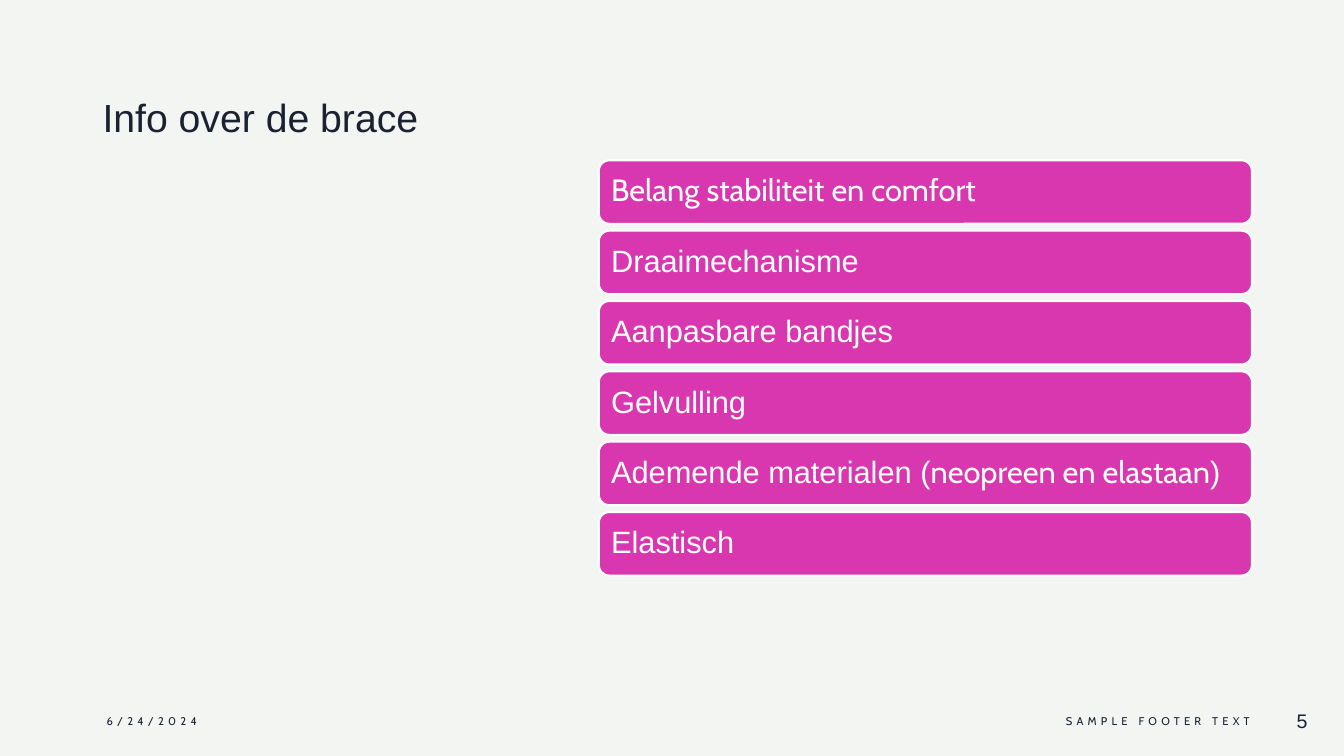
import pptx
import pptx.dml.color
import pptx.enum.shapes
import pptx.enum.text
import pptx.util

Pt = pptx.util.Pt
ALIGN = pptx.enum.text.PP_ALIGN
ANCHOR = pptx.enum.text.MSO_ANCHOR

COLORS = {"background": "F3F5F3", "ink": "1B2130", "bar": "D937B0", "white": "FFFFFF"}
HEADING_FONT = "Arial"
BODY_FONT = "Cabin"

# Each bar holds (text, font) parts.
BRACE_FEATURES = [
    [("Belang stabiliteit en comfort", BODY_FONT)],
    [("Draaimechanisme", HEADING_FONT)],
    [("Aanpasbare bandjes", HEADING_FONT)],
    [("Gelvulling", HEADING_FONT)],
    [("Ademende materialen (", HEADING_FONT), ("neopreen en elastaan", BODY_FONT), (")", HEADING_FONT)],
    [("Elastisch", HEADING_FONT)],
]
BAR_LEFT, BAR_TOP, BAR_WIDTH, BAR_HEIGHT = 427.7, 114.5, 466.6, 45.4
BAR_PITCH = 50.25
BAR_INSET = 6.6
FOOTER_TOP, FOOTER_HEIGHT = 500.4, 28.8


def color(name):
    return pptx.dml.color.RGBColor.from_string(COLORS[name])


class SlideBuilder:
    def __init__(self, slide):
        self.slide = slide

    def background(self, color_name):
        fill = self.slide.background.fill
        fill.solid()
        fill.fore_color.rgb = color(color_name)

    def set_text(self, shape, parts, size, color_name, align=ALIGN.LEFT, tracking=0):
        """Fill the shape's single paragraph with (text, font) parts."""
        paragraph = shape.text_frame.paragraphs[0]
        paragraph.alignment = align
        paragraph.text = parts[0][0]
        for text, _ in parts[1:]:
            paragraph.add_run().text = text
        for run, (_, font_name) in zip(paragraph.runs, parts):
            run.font.name = font_name
            run.font.size = Pt(size)
            run.font.color.rgb = color(color_name)
            if tracking:
                run.font._element.set("spc", str(tracking * 100))
        return paragraph

    def text_box(self, box, text, font_name, size, anchor=ANCHOR.TOP, **style):
        shape = self.slide.shapes.add_textbox(*map(Pt, box))
        shape.text_frame.word_wrap = True
        shape.text_frame.vertical_anchor = anchor
        return self.set_text(shape, [(text, font_name)], size, "ink", **style)

    def footer(self, left, width, text, font_name, size, **style):
        box = (left, FOOTER_TOP, width, FOOTER_HEIGHT)
        paragraph = self.text_box(box, text, font_name, size, ANCHOR.MIDDLE, **style)
        paragraph.space_after = Pt(6)

    def bar(self, top, parts):
        shape = self.slide.shapes.add_shape(
            pptx.enum.shapes.MSO_SHAPE.ROUNDED_RECTANGLE,
            Pt(BAR_LEFT), Pt(top), Pt(BAR_WIDTH), Pt(BAR_HEIGHT))
        shape.shadow.inherit = False
        shape.fill.solid()
        shape.fill.fore_color.rgb = color("bar")
        shape.line.color.rgb = color("white")
        shape.line.width = Pt(1.5)
        frame = shape.text_frame
        frame.word_wrap = True
        frame.vertical_anchor = ANCHOR.MIDDLE
        frame.margin_left = frame.margin_right = Pt(BAR_INSET)
        frame.margin_top = frame.margin_bottom = Pt(BAR_INSET)
        paragraph = self.set_text(shape, parts, 22, "white")
        paragraph.line_spacing = 0.9
        paragraph.space_after = Pt(7.7)


def main():
    presentation = pptx.Presentation()
    presentation.slide_width = Pt(960)
    presentation.slide_height = Pt(540)
    builder = SlideBuilder(presentation.slides.add_slide(presentation.slide_layouts[6]))

    builder.background("background")
    builder.text_box((66.2, 63.4, 286.6, 162.7), "Info over de brace", HEADING_FONT, 28)
    builder.footer(69.1, 216, "6/24/2024", BODY_FONT, 8, tracking=3)
    builder.footer(561.6, 338.4, "SAMPLE FOOTER TEXT", BODY_FONT, 8, align=ALIGN.RIGHT, tracking=3)
    builder.footer(900, 41, "5", HEADING_FONT, 14, align=ALIGN.RIGHT)
    for index, parts in enumerate(BRACE_FEATURES):
        builder.bar(BAR_TOP + index * BAR_PITCH, parts)

    presentation.save("out.pptx")


if __name__ == "__main__":
    main()
